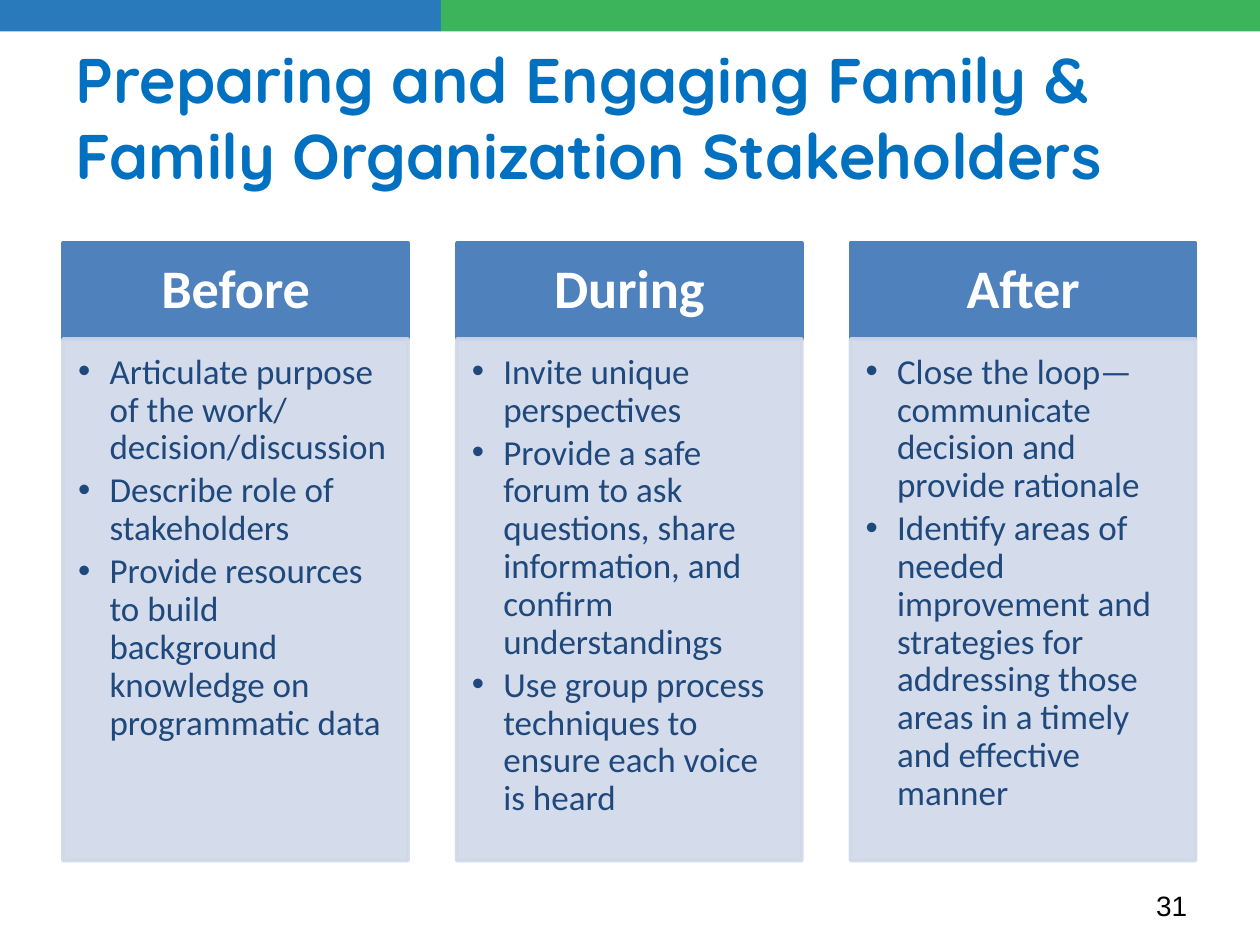
import pptx
import pptx.util
import pptx.dml.color
import pptx.enum.shapes
import pptx.enum.text
import pptx.oxml.ns
from lxml import etree

Inches, Pt = pptx.util.Inches, pptx.util.Pt
ALIGN = pptx.enum.text.PP_ALIGN
ANCHOR = pptx.enum.text.MSO_ANCHOR
qn = pptx.oxml.ns.qn

# Content
TITLE = "Preparing and Engaging Family & Family Organization Stakeholders"
PAGE = "31"
STAGES = [
    ("Before", ["Articulate purpose of the work/ decision/discussion",
                "Describe role of stakeholders",
                "Provide resources to build background knowledge on programmatic data"]),
    ("During", ["Invite unique perspectives",
                "Provide a safe forum to ask questions, share information, and confirm understandings",
                "Use group process techniques to ensure each voice is heard"]),
    ("After", ["Close the loop—communicate decision and provide rationale",
               "Identify areas of needed improvement and strategies for addressing "
               "those areas in a timely and effective manner"]),
]

# Formats
COLORS = {"blue": "297ABB", "green": "3CB45C", "title": "0070C0", "head": "4F81BD",
          "body": "D0D8E8", "text": "1F497D", "white": "FFFFFF", "black": "000000"}
FONTS = {
    "title": {"name": "Quicksand", "size": Pt(36), "bold": True},
    "head": {"name": "Calibri", "size": Pt(31), "bold": True},
    "body": {"name": "Calibri", "size": Pt(20), "bold": False},
    "page": {"name": "Arial", "size": Pt(16), "bold": False},
}
PARAS = {
    "title": {"alignment": ALIGN.LEFT},
    "head": {"alignment": ALIGN.CENTER, "line_spacing": 0.9},
    "body": {"alignment": ALIGN.LEFT, "line_spacing": 0.9, "space_after": Pt(3)},
    "page": {"alignment": ALIGN.RIGHT},
}
SIDES = ("margin_left", "margin_top", "margin_right", "margin_bottom")

# Grid, in inches
WIDE, HIGH = 10, 7.5
BAR, SPLIT = 0.25, 0.35 * WIDE
EDGE, COL, STEP = 0.5, 2.74, 3.125
TOP, HEAD, BODY = 1.93, 0.76, 4.14


def paint(color, hue):
    color.rgb = pptx.dml.color.RGBColor.from_string(COLORS[hue])


def assign(obj, values):
    for key, value in values.items():
        setattr(obj, key, value)


def write(frame, lines, style, hue, anchor=ANCHOR.TOP, pads=None):
    assign(frame, {"word_wrap": True, "vertical_anchor": anchor})
    if pads:
        assign(frame, dict(zip(SIDES, map(Inches, pads))))
    for i, line in enumerate(lines):
        para = frame.add_paragraph() if i else frame.paragraphs[0]
        assign(para, PARAS[style])
        run = para.add_run()
        run.text = line
        assign(run.font, FONTS[style])
        paint(run.font.color, hue)


def add_box(slide, place, hue, line=True):
    box = slide.shapes.add_shape(pptx.enum.shapes.MSO_SHAPE.RECTANGLE, *map(Inches, place))
    box.shadow.inherit = False
    box.fill.solid()
    paint(box.fill.fore_color, hue)
    if line:
        paint(box.line.color, hue)
        box.line.width = Pt(2)
    else:
        box.line.fill.background()
    return box


def fade(box, share):
    for color in box.element.spPr.iter(qn("a:srgbClr")):
        etree.SubElement(color, qn("a:alpha"), val=str(share * 1000))


def add_bullet(para):
    props = para._p.get_or_add_pPr()
    props.set("marL", str(Inches(0.25)))
    props.set("indent", str(-Inches(0.25)))
    etree.SubElement(props, qn("a:buFont"), typeface="Arial")
    etree.SubElement(props, qn("a:buChar"), char="•")


def main():
    deck = pptx.Presentation()
    deck.slide_width, deck.slide_height = Inches(WIDE), Inches(HIGH)
    slide = deck.slides.add_slide(deck.slide_layouts[5])

    # Top band
    add_box(slide, (0, 0, SPLIT, BAR), "blue", line=False)
    add_box(slide, (SPLIT, 0, WIDE - SPLIT, BAR), "green", line=False)

    # Title
    title = slide.shapes.title
    assign(title, dict(zip(("left", "top", "width", "height"),
                           map(Inches, (EDGE, 0.3, WIDE - 2 * EDGE, 1.25)))))
    write(title.text_frame, [TITLE], "title", "title", ANCHOR.MIDDLE)

    # Stage columns
    for i, (name, points) in enumerate(STAGES):
        left = EDGE + i * STEP
        head = add_box(slide, (left, TOP, COL, HEAD), "head")
        write(head.text_frame, [name], "head", "white", ANCHOR.MIDDLE,
              (0.24, 0.14, 0.24, 0.14))
        body = add_box(slide, (left, TOP + HEAD, COL, BODY), "body")
        fade(body, 90)
        write(body.text_frame, points, "body", "text", pads=(0.12, 0.12, 0.16, 0.17))
        for para in body.text_frame.paragraphs:
            add_bullet(para)

    # Page number
    page = slide.shapes.add_textbox(*map(Inches, (8.19, 7, 1.33, 0.37)))
    write(page.text_frame, [PAGE], "page", "black")

    deck.save("out.pptx")


if __name__ == "__main__":
    main()
